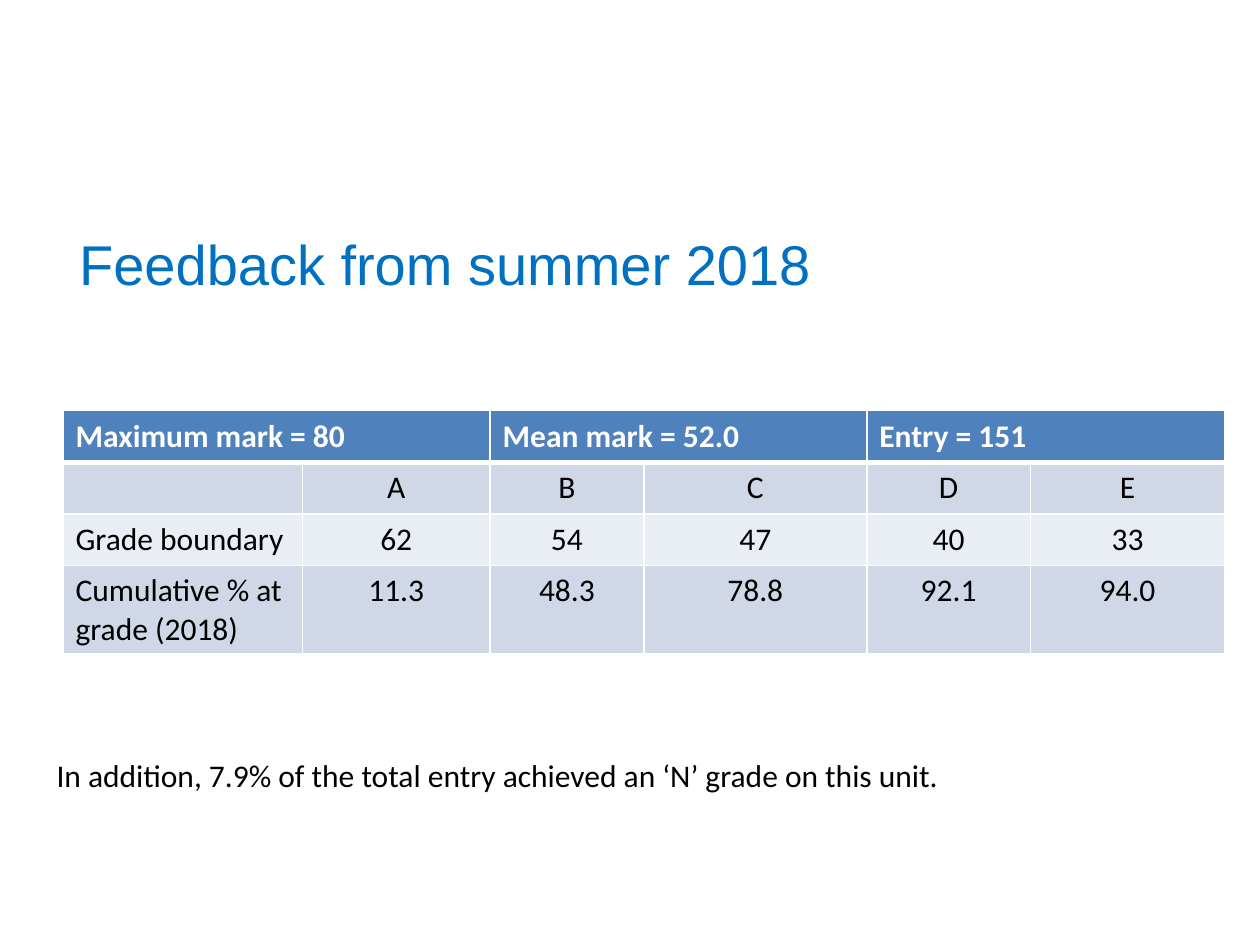
from pptx import Presentation
from pptx.dml.color import RGBColor as RGB
from pptx.enum.text import PP_ALIGN as Align
from pptx.oxml.ns import qn
from pptx.util import Inches, Pt
from lxml.etree import SubElement

# Content
TITLE = "Feedback from summer 2018"
SUMMARY = ["Maximum mark = 80", "Mean mark = 52.0", "Entry = 151"]
GRADES = [
    ["", "A", "B", "C", "D", "E"],
    ["Grade boundary", "62", "54", "47", "40", "33"],
    ["Cumulative % at grade (2018)", "11.3", "48.3", "78.8", "92.1", "94.0"],
]
NOTE = "In addition, 7.9% of the total entry achieved an ‘N’ grade on this unit."

COLUMN_WIDTHS = [1.9, 1.49, 1.22, 1.77, 1.3, 1.54]
ROW_HEIGHTS = [0.41, 0.41, 0.41, 0.7]
SPAN = 2  # columns under each summary heading

THEME = {
    "title_font": "Arial", "body_font": "Calibri",
    "title_size": 32, "body_size": 18,
    "title": "0070C0", "text": "000000", "white": "FFFFFF",
    "header": "4F81BD", "bands": ["D0D8E8", "E9EDF4"],
    "rule": 1, "header_rule": 3,
}


def write(frame, text, role, color, bold=False, align=Align.LEFT):
    frame.text = text
    paragraph = frame.paragraphs[0]
    paragraph.alignment = align
    font = paragraph.font
    if paragraph.runs:
        font = paragraph.runs[0].font
    font.name = THEME[role + "_font"]
    font.size = Pt(THEME[role + "_size"])
    font.color.rgb = RGB.from_string(THEME[color])
    font.bold = bold


def add_text(slide, box, text, role, color, margin_top=0.05):
    frame = slide.shapes.add_textbox(*map(Inches, box)).text_frame
    frame.word_wrap = True
    frame.margin_top = Inches(margin_top)
    write(frame, text, role, color)


def style_cell(cell, fill, top, bottom):
    properties = cell._tc.get_or_add_tcPr()
    sides = {"lnL": THEME["rule"], "lnR": THEME["rule"], "lnT": top, "lnB": bottom}
    for side, width in sides.items():
        line = SubElement(properties, qn("a:" + side), w=str(Pt(width)))
        solid = SubElement(line, qn("a:solidFill"))
        SubElement(solid, qn("a:srgbClr"), val=THEME["white"])
    cell.fill.solid()
    cell.fill.fore_color.rgb = RGB.from_string(fill)


def add_grades(slide, left, top):
    size = (sum(COLUMN_WIDTHS), sum(ROW_HEIGHTS))
    table = slide.shapes.add_table(
        len(ROW_HEIGHTS), len(COLUMN_WIDTHS), *map(Inches, (left, top, *size))).table
    for column, width in zip(table.columns, COLUMN_WIDTHS):
        column.width = Inches(width)
    for row, height in zip(table.rows, ROW_HEIGHTS):
        row.height = Inches(height)

    # Summary headings, each merged over a pair of columns
    rule, header_rule = THEME["rule"], THEME["header_rule"]
    for c in range(len(COLUMN_WIDTHS)):
        style_cell(table.cell(0, c), THEME["header"], rule, header_rule)
    for i, heading in enumerate(SUMMARY):
        cell = table.cell(0, i * SPAN)
        cell.merge(table.cell(0, i * SPAN + SPAN - 1))
        write(cell.text_frame, heading, "body", "white", bold=True)

    # Banded grade rows
    for r, values in enumerate(GRADES, start=1):
        for c, value in enumerate(values):
            cell = table.cell(r, c)
            style_cell(cell, THEME["bands"][(r - 1) % 2],
                       header_rule if r == 1 else rule, rule)
            write(cell.text_frame, value, "body", "text",
                  align=Align.CENTER if c else Align.LEFT)


def main():
    deck = Presentation()
    deck.slide_width, deck.slide_height = Inches(10), Inches(7.5)
    slide = deck.slides.add_slide(deck.slide_layouts[6])
    add_text(slide, (0.53, 1.71, 9.21, 1.3), TITLE, "title", "title", margin_top=0.11)
    add_grades(slide, 0.5, 3.26)
    add_text(slide, (0.35, 5.95, 9.45, 0.4), NOTE, "body", "text")
    deck.save("out.pptx")


if __name__ == "__main__":
    main()
